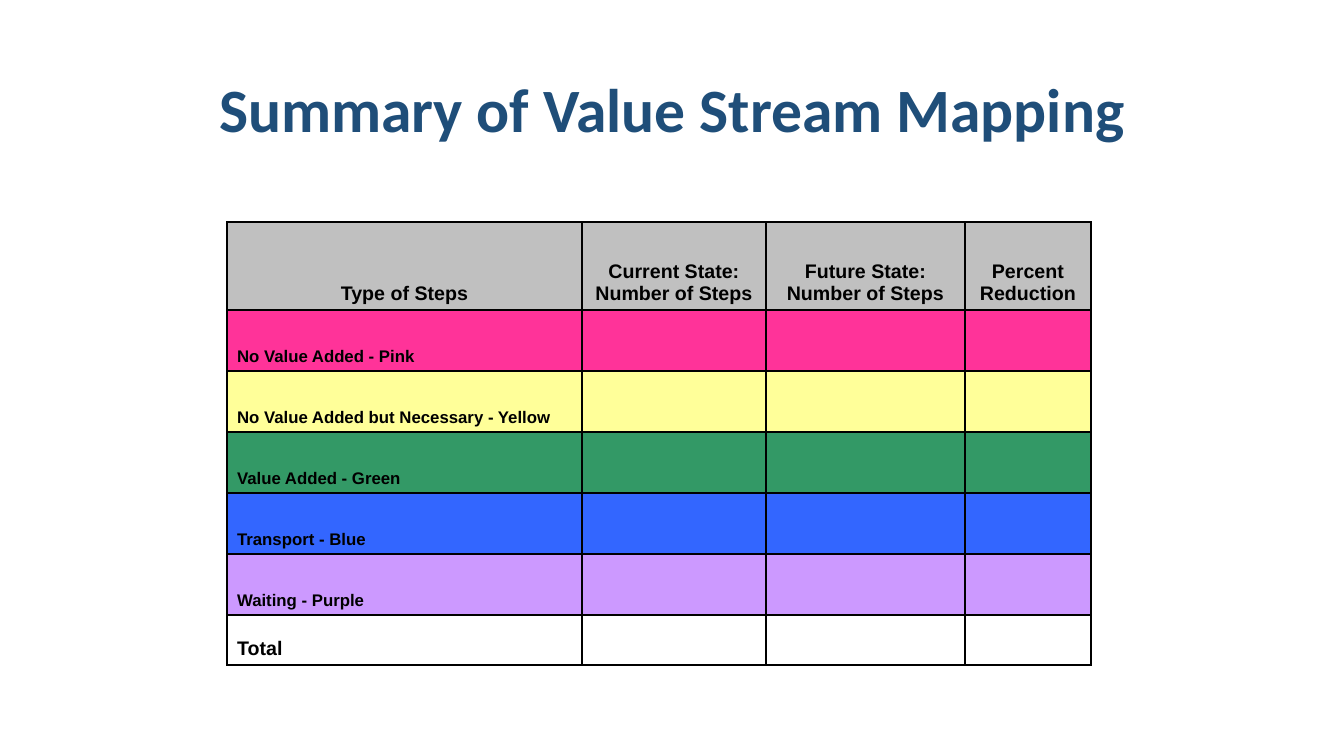
from lxml.etree import SubElement
from pptx import Presentation
from pptx.dml.color import RGBColor
from pptx.enum.text import MSO_ANCHOR, PP_ALIGN
from pptx.oxml.ns import qn
from pptx.util import Emu, Pt

# Content
TITLE = "Summary of Value Stream Mapping"
HEADERS = ["Type of Steps", "Current State: Number of Steps",
           "Future State: Number of Steps", "Percent Reduction"]
STEPS = [
    ("No Value Added - Pink", "pink"),
    ("No Value Added but Necessary - Yellow", "yellow"),
    ("Value Added - Green", "green"),
    ("Transport - Blue", "blue"),
    ("Waiting - Purple", "purple"),
]
TOTAL = "Total"
COLORS = {
    "title": "1F4E79", "text": "000000", "border": "000000",
    "header": "C0C0C0", "pink": "FF3399", "yellow": "FFFF99",
    "green": "339966", "blue": "3366FF", "purple": "CC99FF",
}

# Layout in px
SLIDE_W, SLIDE_H = 1344, 756
TITLE_BOX = (93, 40, 1159, 146)
TABLE_LEFT, TABLE_TOP = 227, 222
COL_WIDTHS = [355, 184, 199, 126]
HEADER_H, STEP_H, TOTAL_H = 88, 61, 50


def px(n):
    return Emu(round(n * 914400 / 100.8))


def set_font(p, name, size, color):
    p.font.name, p.font.size, p.font.bold = name, Pt(size), True
    p.font.color.rgb = RGBColor.from_string(COLORS[color])


def add_borders(cell):
    tcPr = cell._tc.get_or_add_tcPr()
    for side in ("a:lnL", "a:lnR", "a:lnT", "a:lnB"):
        ln = SubElement(tcPr, qn(side), w=str(Pt(1)))
        fill = SubElement(ln, qn("a:solidFill"))
        SubElement(fill, qn("a:srgbClr"), val=COLORS["border"])


prs = Presentation()
prs.slide_width, prs.slide_height = px(SLIDE_W), px(SLIDE_H)
s = prs.slides.add_slide(prs.slide_layouts[6])

# Title
tf = s.shapes.add_textbox(*map(px, TITLE_BOX)).text_frame
tf.word_wrap = True
tf.vertical_anchor = MSO_ANCHOR.MIDDLE
p = tf.paragraphs[0]
p.text = TITLE
p.alignment = PP_ALIGN.CENTER
p.line_spacing = 0.9
set_font(p, "Calibri", 44, "title")

# Rows: texts, fill, text size, height, alignment
blanks = [""] * (len(HEADERS) - 1)
rows = [(HEADERS, "header", 14, HEADER_H, PP_ALIGN.CENTER)]
rows += [([name] + blanks, color, 12, STEP_H, PP_ALIGN.LEFT) for name, color in STEPS]
rows.append(([TOTAL] + blanks, None, 14, TOTAL_H, PP_ALIGN.LEFT))

# Table
table_h = sum(row[3] for row in rows)
table = s.shapes.add_table(len(rows), len(HEADERS), px(TABLE_LEFT), px(TABLE_TOP),
                           px(sum(COL_WIDTHS)), px(table_h)).table
table.first_row = table.horz_banding = False
for column, width in zip(table.columns, COL_WIDTHS):
    column.width = px(width)
for r, (texts, color, size, height, align) in enumerate(rows):
    table.rows[r].height = px(height)
    for c, text in enumerate(texts):
        cell = table.cell(r, c)
        add_borders(cell)
        if color:
            cell.fill.solid()
            cell.fill.fore_color.rgb = RGBColor.from_string(COLORS[color])
        else:
            cell.fill.background()
        cell.vertical_anchor = MSO_ANCHOR.BOTTOM
        if text:
            p = cell.text_frame.paragraphs[0]
            p.text = text
            p.alignment = align
            set_font(p, "Arial", size, "text")

prs.save("out.pptx")
